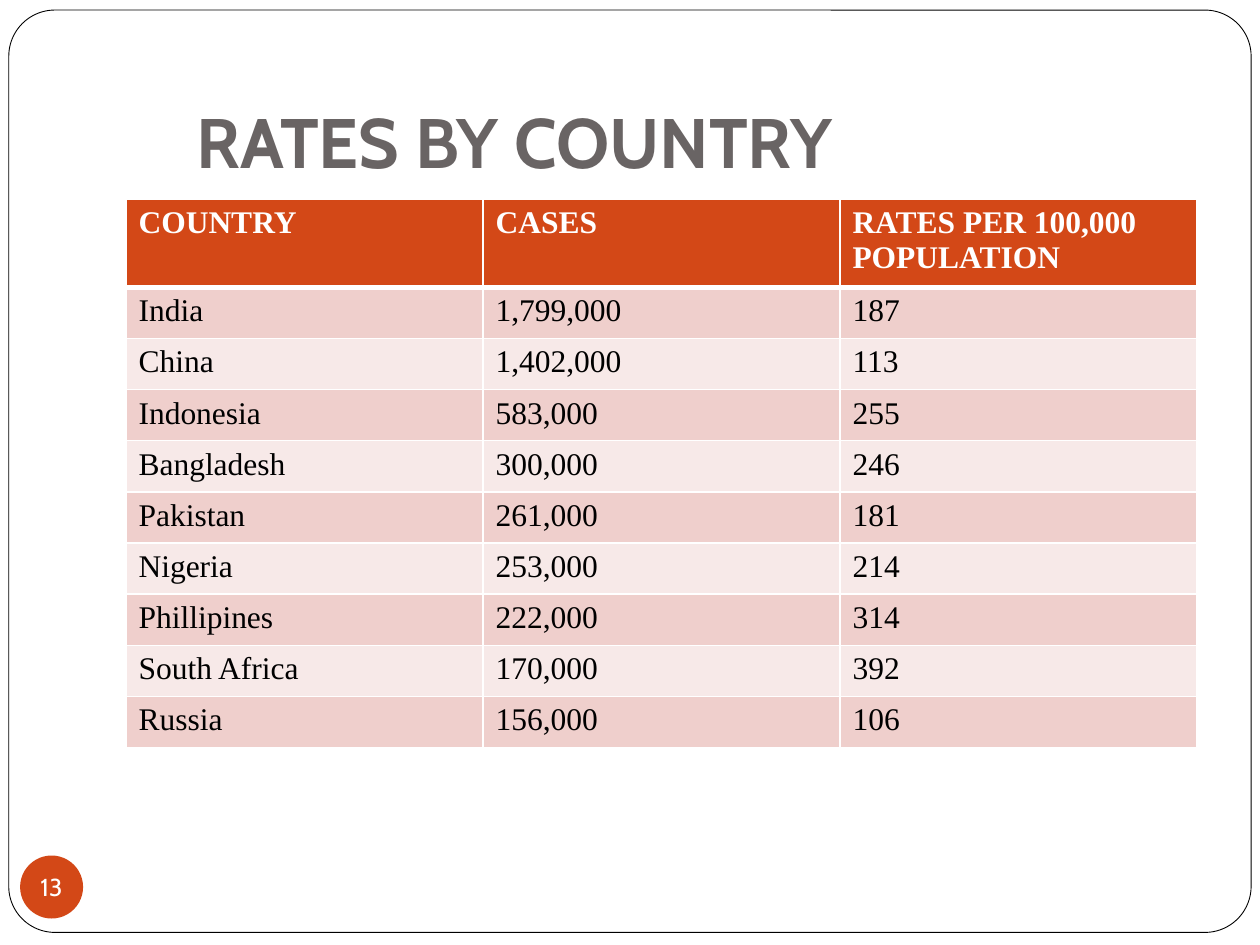
from typing import Any, NamedTuple

from lxml import etree
from pptx import Presentation
from pptx.dml.color import RGBColor
from pptx.enum import shapes, text
from pptx.oxml import ns
from pptx.util import Inches, Pt

ORANGE, WHITE, BLACK, GREY = "D34817", "FFFFFF", "000000", "696464"
BANDS = ("EFCFCC", "F7E9E8")
HEADING_FONT, TABLE_FONT = "Cabin", "Times New Roman"


class Box(NamedTuple):
    left: float
    top: float
    width: float
    height: float

    def lengths(self) -> list[int]:
        return [Inches(value) for value in self]


class CountryRate(NamedTuple):
    country: str
    cases: str
    rate: str


HEADINGS = CountryRate("COUNTRY", "CASES", "RATES PER 100,000 POPULATION")
RATES = [
    CountryRate("India", "1,799,000", "187"),
    CountryRate("China", "1,402,000", "113"),
    CountryRate("Indonesia", "583,000", "255"),
    CountryRate("Bangladesh", "300,000", "246"),
    CountryRate("Pakistan", "261,000", "181"),
    CountryRate("Nigeria", "253,000", "214"),
    CountryRate("Phillipines", "222,000", "314"),
    CountryRate("South Africa", "170,000", "392"),
    CountryRate("Russia", "156,000", "106"),
]


def rgb(value: str) -> RGBColor:
    return RGBColor.from_string(value)


def apply(target: Any, values: dict[str, Any]) -> None:
    for name, value in values.items():
        setattr(target, name, value)


def fill_solid(part: Any, colour: str) -> None:
    part.fill.solid()
    part.fill.fore_color.rgb = rgb(colour)


def write(frame: Any, words: str, colour: str, frame_format: dict[str, Any],
          font_format: dict[str, Any]) -> None:
    apply(frame, frame_format)
    run = frame.paragraphs[0].add_run()
    run.text = words
    run.font.color.rgb = rgb(colour)
    apply(run.font, font_format)


def add_filled_shape(slide: Any, preset: Any, box: Box, colour: str) -> Any:
    shape = slide.shapes.add_shape(preset, *box.lengths())
    shape.shadow.inherit = False
    fill_solid(shape, colour)
    shape.line.fill.background()
    return shape


def add_frame(slide: Any) -> None:
    frame = add_filled_shape(slide, shapes.MSO_SHAPE.ROUNDED_RECTANGLE,
                             Box(0.07, 0.08, 9.86, 7.32), WHITE)
    frame.adjustments[0] = 0.05
    frame.line.color.rgb = rgb(BLACK)
    frame.line.width = Pt(0.5)


def add_title(slide: Any) -> None:
    title = slide.shapes.add_textbox(*Box(1, 0.3, 8.5, 1.25).lengths())
    write(title.text_frame, "RATES BY COUNTRY", GREY,
          {"word_wrap": True, "vertical_anchor": text.MSO_ANCHOR.BOTTOM,
           "margin_left": Inches(0.56), "margin_bottom": Inches(0.1)},
          {"name": HEADING_FONT, "size": Pt(40), "bold": True})


def add_page_number(slide: Any) -> None:
    badge = add_filled_shape(slide, shapes.MSO_SHAPE.OVAL,
                             Box(0.16, 6.79, 0.5, 0.5), ORANGE)
    margins = {f"margin_{side}": 0 for side in ("left", "top", "right", "bottom")}
    write(badge.text_frame, "13", WHITE,
          {"word_wrap": False, "vertical_anchor": text.MSO_ANCHOR.MIDDLE, **margins},
          {"name": HEADING_FONT, "size": Pt(14)})
    badge.text_frame.paragraphs[0].alignment = text.PP_ALIGN.CENTER


def add_borders(cell: Any, widths: dict[str, float]) -> None:
    properties = cell._tc.get_or_add_tcPr()
    for side, width in widths.items():
        line = etree.SubElement(properties, ns.qn(f"a:ln{side}"), w=str(Pt(width)))
        fill = etree.SubElement(line, ns.qn("a:solidFill"))
        etree.SubElement(fill, ns.qn("a:srgbClr"), val=WHITE)


def add_rates_table(slide: Any) -> None:
    records = [HEADINGS, *RATES]
    table = slide.shapes.add_table(len(records), len(HEADINGS),
                                   *Box(1, 1.58, 8.5, 4.3).lengths()).table
    for column in table.columns:
        column.width = Inches(8.5 / len(HEADINGS))
    for index, record in enumerate(records):
        heading = index == 0
        table.rows[index].height = Inches(0.65 if heading else 0.406)
        widths = {"L": 1, "R": 1, "T": 3 if index == 1 else 1, "B": 3 if heading else 1}
        for cell, words in zip(table.rows[index].cells, record):
            add_borders(cell, widths)
            fill_solid(cell, ORANGE if heading else BANDS[(index - 1) % 2])
            write(cell.text_frame, words, WHITE if heading else BLACK, {},
                  {"name": TABLE_FONT, "size": Pt(18), "bold": heading})


def main() -> None:
    deck = Presentation()
    apply(deck, {"slide_width": Inches(10), "slide_height": Inches(7.5)})
    slide = deck.slides.add_slide(deck.slide_layouts[6])
    add_frame(slide)
    add_title(slide)
    add_page_number(slide)
    add_rates_table(slide)
    deck.save("out.pptx")


if __name__ == "__main__":
    main()
